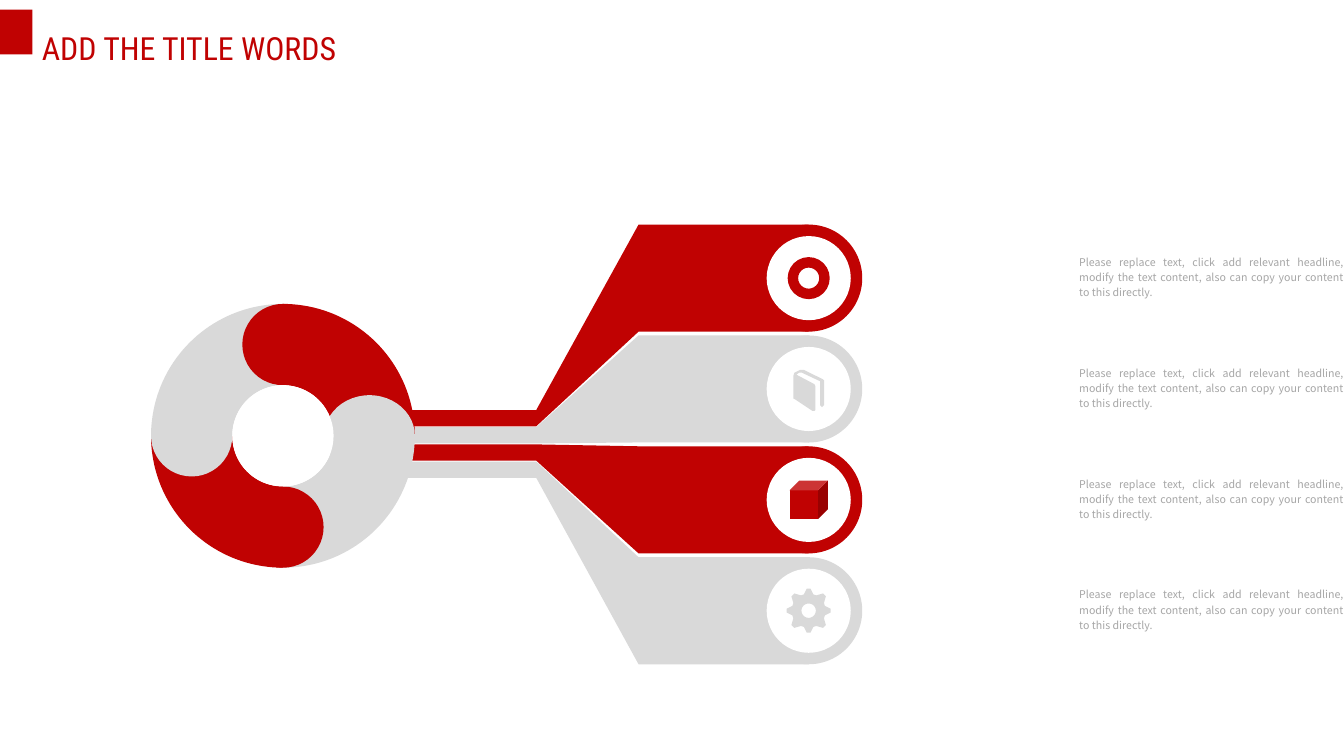
from math import cos, radians, sin

from pptx import Presentation
from pptx.dml.color import RGBColor
from pptx.enum.shapes import MSO_SHAPE
from pptx.enum.text import MSO_AUTO_SIZE, PP_ALIGN
from pptx.util import Inches, Pt

RED, GREY, WHITE, TEXT_GREY = "C00202", "D9D9D9", "FFFFFF", "A6A6A6"
TITLE = "ADD THE TITLE WORDS"
BODY = ("Please replace text, click add relevant headline, modify the text "
        "content, also can copy your content to this directly.")

# Rows of the diagram, in inches
BAND_TOP, BAND_PITCH, BAND_HEIGHT = 2.35, 1.16, 1.12
STEM_TOP, STEM_PITCH, STEM_HEIGHT = 4.29, 0.18, 0.17
TEXT_TOP, TEXT_PITCH = 2.65, 1.16
# Columns of the diagram, in inches
STEM_LEFT, FAN_LEFT, BAND_LEFT, CAP_CENTER, TEXT_LEFT = 4.27, 5.61, 6.68, 8.46, 11.29
# Ring
RING_X, RING_Y, RING_RADIUS, HOLE_RADIUS = 2.96, 4.56, 1.38, 0.53


def paint(shape, color):
    shape.shadow.inherit = False
    shape.fill.solid()
    shape.fill.fore_color.rgb = RGBColor.from_string(color)
    shape.line.fill.background()


def add_box(slide, left, top, width, height, color, kind=MSO_SHAPE.RECTANGLE):
    shape = slide.shapes.add_shape(
        kind, Inches(left), Inches(top), Inches(width), Inches(height))
    paint(shape, color)


def add_disc(slide, x, y, radius, color, radius_x=None):
    radius_x = radius_x or radius
    add_box(slide, x - radius_x, y - radius, 2 * radius_x, 2 * radius, color,
            MSO_SHAPE.OVAL)


def add_outline(slide, contours, color):
    """Draw closed contours, given in inches, as one freeform."""
    first, *others = [[(Inches(x), Inches(y)) for x, y in contour]
                      for contour in contours]
    builder = slide.shapes.build_freeform(*first[0], scale=1.0)
    builder.add_line_segments(first[1:], close=True)
    for contour in others:
        builder.move_to(*contour[0])
        builder.add_line_segments(contour[1:], close=True)
    paint(builder.convert_to_shape(), color)


def arc(radius, start, end, steps=40):
    """Points on a circle about the origin, clockwise angles in degrees."""
    angles = [radians(start + (end - start) * i / steps) for i in range(steps + 1)]
    return [(radius * cos(angle), radius * sin(angle)) for angle in angles]


def add_text(slide, text, left, top, width, height, font, size, color, spacing):
    box = slide.shapes.add_textbox(
        Inches(left), Inches(top), Inches(width), Inches(height))
    frame = box.text_frame
    frame.text = text
    frame.word_wrap = True
    frame.auto_size = MSO_AUTO_SIZE.SHAPE_TO_FIT_TEXT
    paragraph = frame.paragraphs[0]
    paragraph.line_spacing = spacing
    run_font = paragraph.runs[0].font
    run_font.name, run_font.size = font, Pt(size)
    run_font.color.rgb = RGBColor.from_string(color)
    return frame


def add_icon_outline(slide, x, y, contours, color):
    """Draw contours given in hundredths of an inch about (x, y)."""
    add_outline(slide, [[(x + dx / 100, y + dy / 100) for dx, dy in contour]
                        for contour in contours], color)


def add_donut(slide, x, y, color):
    add_box(slide, x - 0.22, y - 0.22, 0.44, 0.44, color, MSO_SHAPE.DONUT)


def add_book(slide, x, y, color):
    cover = [(15, -10), (-5, -20), (-9, -20), (-15, -17), (-16, -14), (-16, 10),
             (-14, 11), (4, 23), (6, 23), (7, 22), (7, -3), (6, -5), (-13, -15),
             (-10, -17), (-7, -17), (12, -8), (12, 17), (14, 19), (16, 17),
             (16, -9)]
    add_icon_outline(slide, x, y, [cover], color)


def add_cube(slide, x, y, color):
    add_box(slide, x - 0.2, y - 0.2, 0.4, 0.4, color, MSO_SHAPE.CUBE)


def add_gear(slide, x, y, color):
    quarter = [(17, 5), (23, 2), (23, -2), (17, -5),
               (16, -8), (18, -15), (15, -18), (8, -16)]
    rim = []
    for _ in range(4):
        rim += quarter
        quarter = [(dy, -dx) for dx, dy in quarter]
    add_icon_outline(slide, x, y, [rim, arc(7.5, 360, 0)], color)


def add_band(slide, row, color, add_icon):
    top = BAND_TOP + row * BAND_PITCH
    bottom, center = top + BAND_HEIGHT, top + BAND_HEIGHT / 2
    stem_top = STEM_TOP + row * STEM_PITCH
    stem_bottom = stem_top + STEM_HEIGHT
    add_outline(slide, [[
        (STEM_LEFT, stem_top), (FAN_LEFT, stem_top), (BAND_LEFT, top),
        (CAP_CENTER, top), (CAP_CENTER, bottom), (BAND_LEFT, bottom),
        (FAN_LEFT, stem_bottom), (STEM_LEFT, stem_bottom)]], color)
    add_disc(slide, CAP_CENTER, center, BAND_HEIGHT / 2, color)
    add_disc(slide, CAP_CENTER, center, 0.44, WHITE)
    add_icon(slide, CAP_CENTER, center, color)


def add_ring(slide):
    lobe = (RING_RADIUS - HOLE_RADIUS) / 2
    middle = HOLE_RADIUS + lobe

    def add_quarter(start, color):
        points = (arc(RING_RADIUS, start, start + 90)
                  + arc(HOLE_RADIUS, start + 90, start))
        add_outline(slide, [[(RING_X + x, RING_Y + y) for x, y in points]], color)

    add_quarter(270, RED)
    add_quarter(180, GREY)
    add_disc(slide, RING_X, RING_Y - middle, lobe, RED)
    add_quarter(90, RED)
    add_disc(slide, RING_X - middle, RING_Y, lobe, GREY)
    add_quarter(0, GREY)
    add_disc(slide, RING_X, RING_Y + middle, lobe, RED)
    add_disc(slide, RING_X + middle - 0.05, RING_Y, lobe, GREY, lobe + 0.05)
    add_disc(slide, RING_X, RING_Y, HOLE_RADIUS, WHITE)


def add_description(slide, row):
    frame = add_text(slide, BODY, TEXT_LEFT, TEXT_TOP + row * TEXT_PITCH, 2.77, 0.47,
                     "Noto Sans CJK SC", 8, TEXT_GREY, 1.2)
    frame.margin_left = frame.margin_right = 0
    frame.margin_top = frame.margin_bottom = 0
    frame.paragraphs[0].alignment = PP_ALIGN.JUSTIFY


def main():
    presentation = Presentation()
    presentation.slide_width = Inches(14.06)
    presentation.slide_height = Inches(7.91)
    slide = presentation.slides.add_slide(presentation.slide_layouts[6])
    add_box(slide, 0, 0.1, 0.34, 0.47, RED)
    for row, add_icon in enumerate((add_donut, add_book, add_cube, add_gear)):
        add_description(slide, row)
        add_band(slide, row, (RED, GREY)[row % 2], add_icon)
    add_ring(slide)
    add_text(slide, TITLE, 0.34, 0.05, 3.54, 0.63, "Roboto Condensed", 24, RED, 1.5)
    presentation.save("out.pptx")


if __name__ == "__main__":
    main()
